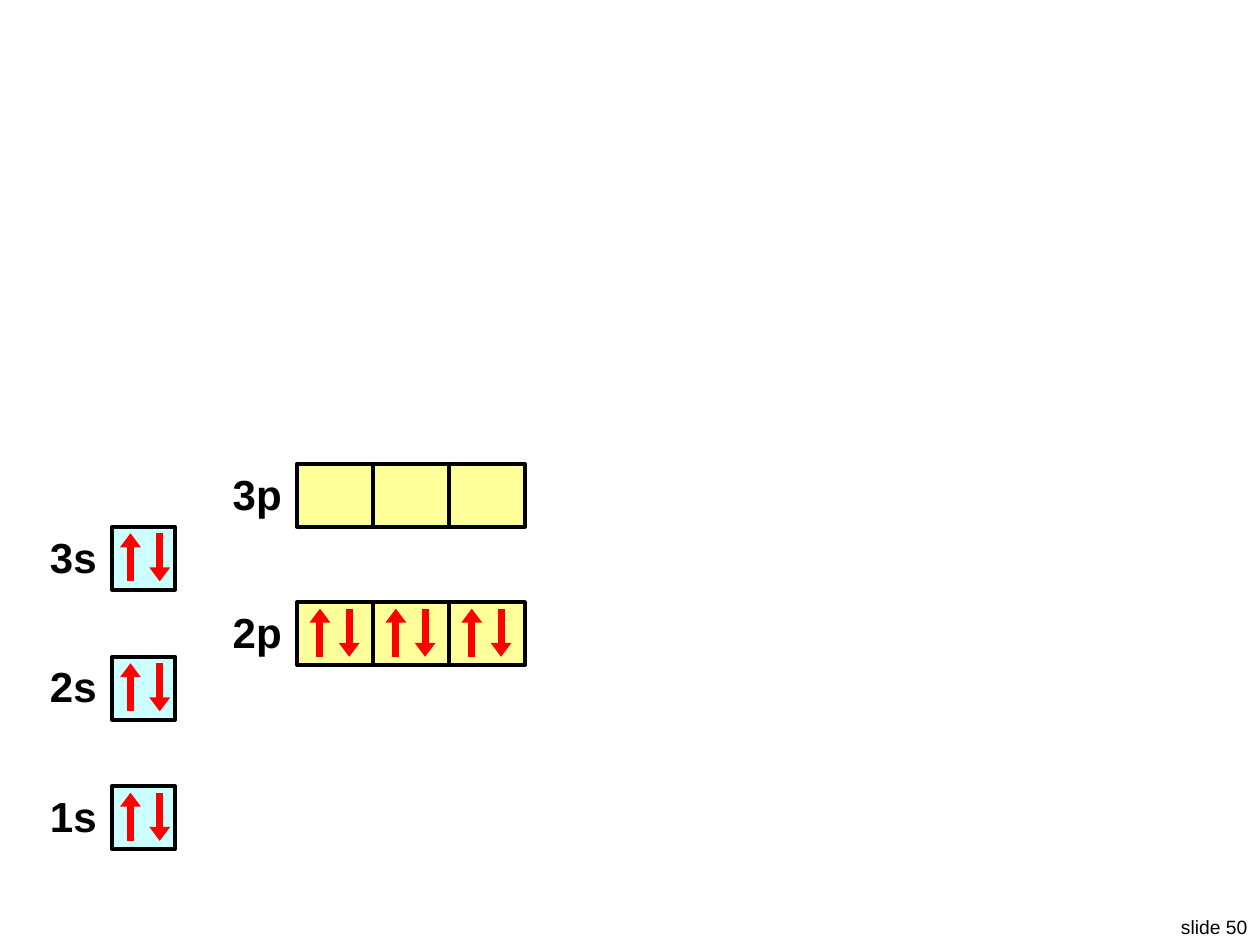
"""Build a slide of orbital boxes filled with paired electrons."""
from lxml.etree import SubElement
from pptx import Presentation
from pptx.dml.color import RGBColor
from pptx.enum.shapes import MSO_CONNECTOR, MSO_SHAPE
from pptx.enum.text import MSO_AUTO_SIZE, PP_ALIGN
from pptx.oxml.ns import qn
from pptx.util import Cm, Pt

BLACK = RGBColor(0x00, 0x00, 0x00)
RED = RGBColor(0xFF, 0x00, 0x00)
PALE_BLUE = RGBColor(0xCC, 0xFF, 0xFF)
PALE_YELLOW = RGBColor(0xFF, 0xFF, 0x99)

ORBITAL_HEIGHT = 1.27
SPIN_GAP = 0.59
S_STYLE = {"left": 2.26, "width": 1.27, "count": 1, "color": PALE_BLUE, "spin_offset": 0.37}
P_STYLE = {"left": 5.99, "width": 1.53, "count": 3, "color": PALE_YELLOW, "spin_offset": 0.46}


def add_label(shapes, text, left, top, width, height, size, bold=False):
    """Add a right-aligned line of text."""
    label = shapes.add_textbox(Cm(left), Cm(top), Cm(width), Cm(height))
    frame = label.text_frame
    frame.word_wrap = False
    frame.auto_size = MSO_AUTO_SIZE.SHAPE_TO_FIT_TEXT
    paragraph = frame.paragraphs[0]
    paragraph.text = text
    paragraph.alignment = PP_ALIGN.RIGHT
    paragraph.font.name = "Arial"
    paragraph.font.size = Pt(size)
    paragraph.font.bold = bold
    paragraph.font.color.rgb = BLACK


def add_orbital(shapes, left, top, width, color):
    """Add one outlined orbital box."""
    orbital = shapes.add_shape(
        MSO_SHAPE.RECTANGLE, Cm(left), Cm(top), Cm(width), Cm(ORBITAL_HEIGHT)
    )
    orbital.shadow.inherit = False
    orbital.fill.solid()
    orbital.fill.fore_color.rgb = color
    orbital.line.color.rgb = BLACK
    orbital.line.width = Pt(2.25)


def add_spin(shapes, x, start, end):
    """Add a vertical electron arrow that points to its end."""
    spin = shapes.add_connector(MSO_CONNECTOR.STRAIGHT, Cm(x), Cm(start), Cm(x), Cm(end))
    spin.line.color.rgb = RED
    spin.line.width = Pt(4)
    SubElement(spin.line._get_or_add_ln(), qn("a:tailEnd"), type="triangle", w="med", len="sm")
    SubElement(spin._element.spPr, qn("a:effectLst"))


def add_electron_pair(shapes, x, top):
    """Add an up arrow and a down arrow side by side."""
    upper, lower = top + 0.13, top + 1.1
    add_spin(shapes, x, lower, upper)
    add_spin(shapes, x + SPIN_GAP, upper, lower)


def add_subshell(slide, name, top, style, filled=True):
    """Add a grouped subshell with its label, orbitals and electrons."""
    shapes = slide.shapes.add_group_shape().shapes
    add_label(shapes, name, style["left"] - 1.58, top - 0.04, 1.52, 1.27, 24, bold=True)
    lefts = [style["left"] + i * style["width"] for i in range(style["count"])]
    for left in lefts:
        add_orbital(shapes, left, top, style["width"], style["color"])
    if filled:
        for left in lefts:
            add_electron_pair(shapes, left + style["spin_offset"], top)


def main():
    """Build and save the slide."""
    presentation = Presentation()
    presentation.slide_width, presentation.slide_height = Cm(25.4), Cm(19.05)
    slide = presentation.slides.add_slide(presentation.slide_layouts[6])
    add_label(slide.shapes, "slide 50", 23.5, 18.32, 1.9, 0.74, 11)
    add_subshell(slide, "1s", 15.85, S_STYLE)
    add_subshell(slide, "3p", 9.35, P_STYLE, filled=False)
    add_subshell(slide, "3s", 10.62, S_STYLE)
    add_subshell(slide, "2s", 13.24, S_STYLE)
    add_subshell(slide, "2p", 12.14, P_STYLE)
    presentation.save("out.pptx")


if __name__ == "__main__":
    main()
